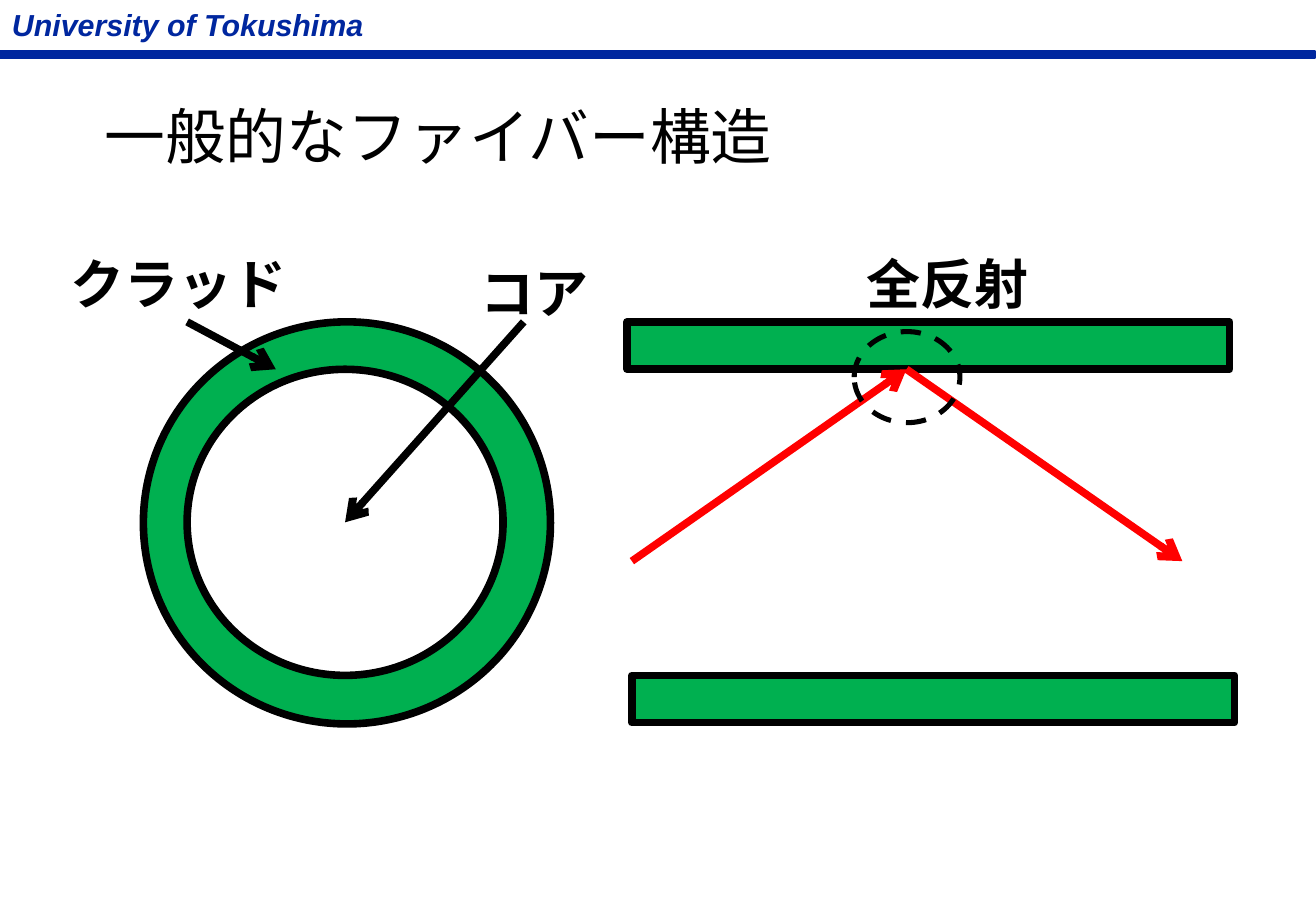
from lxml import etree
from pptx import Presentation
from pptx import util as u
from pptx.dml.color import RGBColor
from pptx.enum import dml, shapes, text
from pptx.oxml import ns

INK = {"navy": "00279F", "black": "000000", "green": "00B050",
       "white": "FFFFFF", "red": "FF0000"}
HEAD = {"size": u.Pt(18), "bold": True, "italic": True}
TITLE = {"size": u.Pt(36), "bold": False}
LABEL = {"size": u.Pt(32), "bold": True}
FRAME = {"margin_left": u.Inches(0.1), "margin_right": u.Inches(0.1),
         "margin_top": u.Inches(0.05), "margin_bottom": u.Inches(0.05),
         "vertical_anchor": text.MSO_ANCHOR.TOP,
         "auto_size": text.MSO_AUTO_SIZE.NONE}
RECT = shapes.MSO_SHAPE.RECTANGLE
OVAL = shapes.MSO_SHAPE.OVAL


def rgb(name):
    return RGBColor.from_string(INK[name])


def inches(vals):
    return [u.Inches(v) for v in vals]


def apply(item, vals):
    for key, val in vals.items():
        setattr(item, key, val)


def write(box, words, form, ink="black", wrap=True):
    frame = box.text_frame
    frame.text = words
    apply(frame, FRAME)
    frame.word_wrap = wrap
    para = frame.paragraphs[0]
    apply(para, {"alignment": text.PP_ALIGN.LEFT, "line_spacing": 1.0,
                 "space_before": u.Pt(0)})
    apply(para.font, {"name": "Arial", **form})
    para.font.color.rgb = rgb(ink)


def add_text(slide, at, words, form, **more):
    write(slide.shapes.add_textbox(*inches(at)), words, form, **more)


def add_title(slide, at, words):
    title = slide.shapes.title
    apply(title, dict(zip(("left", "top", "width", "height"), inches(at))))
    write(title, words, TITLE)


def add_form(slide, kind, at, fill=None, line="black", width=4.5, dash=None):
    form = slide.shapes.add_shape(kind, *inches(at))
    form.shadow.inherit = False
    if fill:
        form.fill.solid()
        form.fill.fore_color.rgb = rgb(fill)
    else:
        form.fill.background()
    form.line.color.rgb = rgb(line)
    apply(form.line, {"width": u.Pt(width), "dash_style": dash})


def add_arrow(slide, start, end, ink="black"):
    arrow = slide.shapes.add_connector(
        shapes.MSO_CONNECTOR.STRAIGHT, *inches(start + end))
    arrow.line.color.rgb = rgb(ink)
    arrow.line.width = u.Pt(4.5)
    tip = etree.SubElement(arrow.line._get_or_add_ln(), ns.qn("a:tailEnd"))
    tip.set("type", "arrow")
    etree.SubElement(arrow._element.spPr, ns.qn("a:effectLst"))


def main():
    deck = Presentation()
    deck.slide_width, deck.slide_height = inches((10.83, 7.5))
    slide = deck.slides.add_slide(deck.slide_layouts[5])

    # Header and title
    add_form(slide, RECT, (0, 0.42, 10.82, 0.06), "navy", "navy", 1)
    add_text(slide, (0, 0, 3.18, 0.4), "University of Tokushima", HEAD,
             ink="navy", wrap=False)
    add_title(slide, (0.76, 0.76, 5.84, 0.71), "一般的なファイバー構造")

    # Cross section: cladding around core
    add_form(slide, OVAL, (1.18, 2.65, 3.35, 3.31), "green")
    add_form(slide, OVAL, (1.54, 3.04, 2.6, 2.52), "white")
    add_arrow(slide, (4.31, 2.65), (2.84, 4.3))
    add_arrow(slide, (1.54, 2.65), (2.27, 3.04))

    # Side view: cladding walls and the reflected ray
    for left, top in ((5.16, 2.65), (5.2, 5.56)):
        add_form(slide, RECT, (left, top, 4.96, 0.39), "green")
    bounce = (7.46, 3.04)
    add_arrow(slide, (5.2, 4.62), bounce, "red")
    add_arrow(slide, bounce, (9.73, 4.62), "red")
    add_form(slide, OVAL, (7.03, 2.73, 0.87, 0.75), width=3,
             dash=dml.MSO_LINE.DASH)

    # Labels
    for words, left, top, width in (("コア", 3.86, 2.09, 1.34),
                                    ("クラッド", 0.48, 2.01, 2.73),
                                    ("全反射", 7.03, 2.01, 1.89)):
        add_text(slide, (left, top, width, 0.64), words, LABEL)

    deck.save("out.pptx")


if __name__ == "__main__":
    main()
